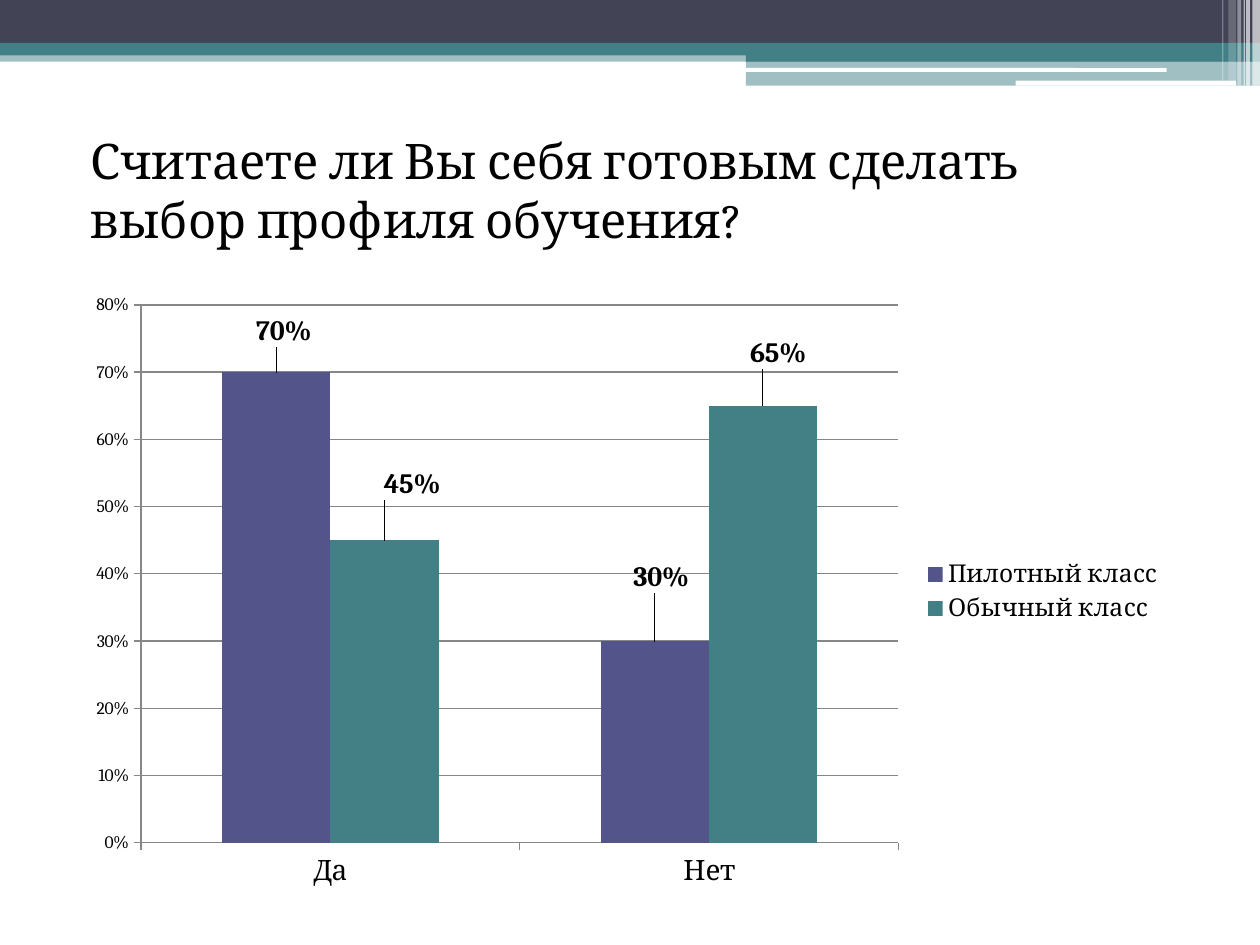
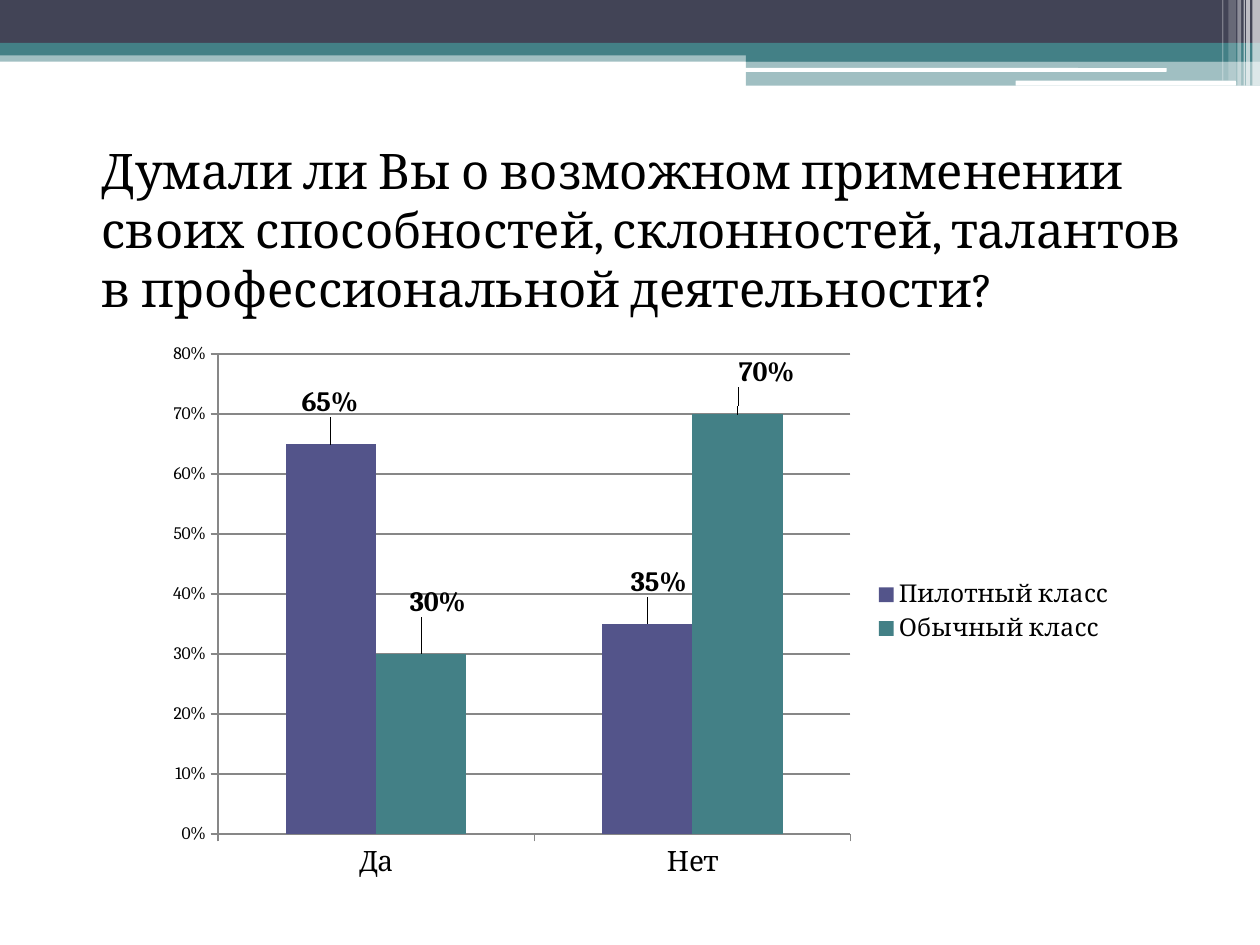
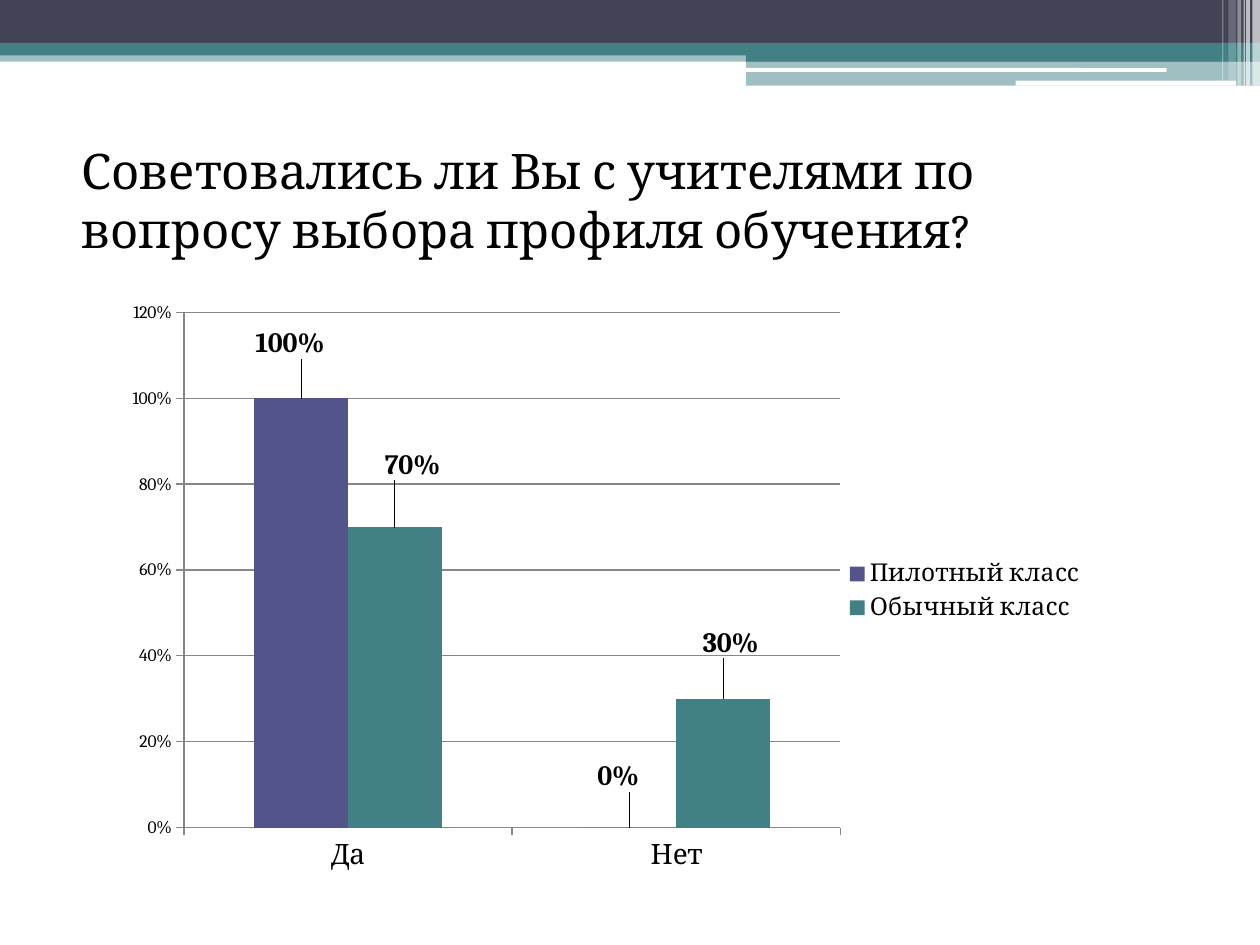
from lxml.etree import SubElement
from pptx import Presentation
from pptx.chart.data import CategoryChartData
from pptx.dml.color import RGBColor
from pptx.enum.chart import XL_CHART_TYPE, XL_LABEL_POSITION, XL_LEGEND_POSITION, XL_TICK_MARK
from pptx.enum.shapes import MSO_SHAPE
from pptx.oxml import parse_xml
from pptx.oxml.ns import nsdecls, qn
from pptx.util import Pt

PX = 9144  # 100 px to the inch
FONT = "Cambria"
BLACK, WHITE, GREY = "000000", "FFFFFF", "878787"
NAVY, TEAL, VIOLET = "424456", "438086", "53548A"
RECT, ROUND = MSO_SHAPE.RECTANGLE, MSO_SHAPE.ROUNDED_RECTANGLE
CATS = ["Да", "Нет"]
GROUPS = [("Пилотный класс", VIOLET), ("Обычный класс", TEAL)]

# Header parts: box, colour, opacity in percent, form
BANDS = [
    ((0, 40, 1000, 9), TEAL, 50, RECT),
    ((0, 0, 1000, 34), NAVY, 100, RECT),
    ((0, 34, 1000, 10), TEAL, 100, RECT),
    ((592, 39, 408, 10), TEAL, 100, RECT),
    ((592, 48, 408, 20), TEAL, 50, RECT),
    ((591, 54, 335, 3), WHITE, 100, ROUND),
    ((806, 64, 175, 4), WHITE, 100, ROUND),
]
# Stripes at the right edge: left, width, height, opacity
STRIPES = [(994, 6, 68, 65), (989, 3, 68, 65), (987, 1, 68, 60),
           (982, 3, 68, 40), (975, 6, 64, 20), (970, 1, 64, 30)]

# Values and label shifts (in px) come one row per group
SLIDES = [
    dict(title="Считаете ли Вы себя готовым сделать выбор профиля обучения?",
         text_box=(50, 99, 900, 620), box=(59, 225, 874, 489),
         plot=(53, 17, 601, 427), top=0.8, step=0.1,
         rows=[(0.7, 0.3), (0.45, 0.65)],
         shifts=[[(6, -16), (5, -34)], [(22, -28), (12, -25)]]),
    dict(title="Думали ли Вы о возможном применении своих способностей, "
               "склонностей, талантов в профессиональной деятельности?",
         text_box=(59, 107, 900, 473), box=(122, 265, 772, 441),
         plot=(51, 16, 502, 381), top=0.8, step=0.1,
         rows=[(0.65, 0.35), (0.3, 0.7)],
         shifts=[[(-1, -17), (9, -17)], [(13, -25), (23, -17)]]),
    dict(title="Советовались ли Вы с учителями по вопросу выбора профиля обучения?",
         text_box=(43, 107, 900, 473), box=(91, 233, 780, 472),
         plot=(55, 15, 521, 409), top=1.2, step=0.2,
         rows=[(1, 0), (0.7, 0.3)],
         shifts=[[(-9, -27), (-9, -24)], [(14, -33), (6, -28)]]),
]


def rgb(code):
    return RGBColor.from_string(code)


def emu(box):
    return [n * PX for n in box]


def style(font, size, color=BLACK, bold=False):
    font.name, font.size, font.bold = FONT, Pt(size), bold
    font.color.rgb = rgb(color)


def add_band(slide, box, color, alpha=100, form=RECT):
    band = slide.shapes.add_shape(form, *emu(box))
    band.shadow.inherit = False
    band.fill.solid()
    band.fill.fore_color.rgb = rgb(color)
    band.line.fill.background()
    if alpha < 100:
        tint = band._element.spPr.find(".//" + qn("a:srgbClr"))
        SubElement(tint, qn("a:alpha"), val=str(alpha * 1000))


def add_header(slide):
    for band in BANDS:
        add_band(slide, *band)
    for left, width, height, alpha in STRIPES:
        add_band(slide, (left, 0, width, height), WHITE, alpha)


def add_text(slide, text, box, size=28, color=BLACK, bold=False, indent=12, before=3):
    frame = slide.shapes.add_textbox(*emu(box)).text_frame
    frame.word_wrap = True
    para = frame.paragraphs[0]
    para.space_before = Pt(before)
    para._p.get_or_add_pPr().set("marL", str(indent * PX))
    run = para.add_run()
    run.text = text
    style(run.font, size, color, bold)


def layout(spots, inner=False):
    """Manual chart layout from (tag, fraction) pairs."""
    modes = ('<c:layoutTarget val="inner"/><c:xMode val="edge"/><c:yMode val="edge"/>'
             if inner else "")
    body = "".join(f'<c:{tag} val="{n:.4f}"/>' for tag, n in spots)
    return parse_xml(f'<c:layout {nsdecls("c")}><c:manualLayout>{modes}{body}'
                     "</c:manualLayout></c:layout>")


def set_axes(chart, top, step):
    value, group = chart.value_axis, chart.category_axis
    value.minimum_scale, value.maximum_scale, value.major_unit = 0, top, step
    value.has_major_gridlines = True
    value.tick_labels.number_format = "0%"
    value.tick_labels.number_format_is_linked = False
    for axis, size in ((value, 10), (group, 16)):
        axis.major_tick_mark = XL_TICK_MARK.OUTSIDE
        style(axis.tick_labels.font, size)
    for part in (value, group, value.major_gridlines):
        part.format.line.color.rgb = rgb(GREY)
        part.format.line.width = Pt(0.75)


def set_labels(series, shifts, wide, high):
    labels = series.data_labels
    labels.show_value = True
    labels.number_format, labels.number_format_is_linked = "0%", False
    style(labels.font, 16, bold=True)
    for i in range(len(shifts)):
        label = series.points[i].data_label
        style(label.font, 16, bold=True)
        label.position = XL_LABEL_POSITION.OUTSIDE_END
    for node, (x, y) in zip(labels._element.findall(qn("c:dLbl")), shifts):
        node.find(qn("c:idx")).addnext(layout([("x", x / wide), ("y", y / high)]))


def add_bars(slide, box, plot, rows, shifts, top, step):
    data = CategoryChartData(number_format="0%")
    data.categories = CATS
    for (name, _), row in zip(GROUPS, rows):
        data.add_series(name, row)
    chart = slide.shapes.add_chart(XL_CHART_TYPE.COLUMN_CLUSTERED, *emu(box), data).chart
    chart.has_title = False
    style(chart.font, 10)
    set_axes(chart, top, step)

    # Legend
    chart.has_legend = True
    chart.legend.position = XL_LEGEND_POSITION.RIGHT
    chart.legend.include_in_layout = False
    style(chart.legend.font, 14)

    # Bars
    wide, high = box[2:]
    bars = chart.plots[0]
    bars.gap_width, bars.overlap, bars.vary_by_categories = 150, 0, False
    for series, (_, color), shift in zip(bars.series, GROUPS, shifts):
        series.format.fill.solid()
        series.format.fill.fore_color.rgb = rgb(color)
        series.invert_if_negative = False
        set_labels(series, shift, wide, high)

    # Plot area
    area = chart._chartSpace.chart.plotArea
    for old in area.findall(qn("c:layout")):
        area.remove(old)
    sizes = (wide, high, wide, high)
    spots = [(tag, n / full) for tag, n, full in zip("xywh", plot, sizes)]
    area.insert(0, layout(spots, inner=True))


def main():
    deck = Presentation()
    deck.slide_width, deck.slide_height = emu((1000, 750))
    for item in SLIDES:
        slide = deck.slides.add_slide(deck.slide_layouts[6])
        add_header(slide)
        add_text(slide, item["title"], item["text_box"])
        add_bars(slide, item["box"], item["plot"], item["rows"], item["shifts"],
                 item["top"], item["step"])
    deck.save("out.pptx")


if __name__ == "__main__":
    main()
